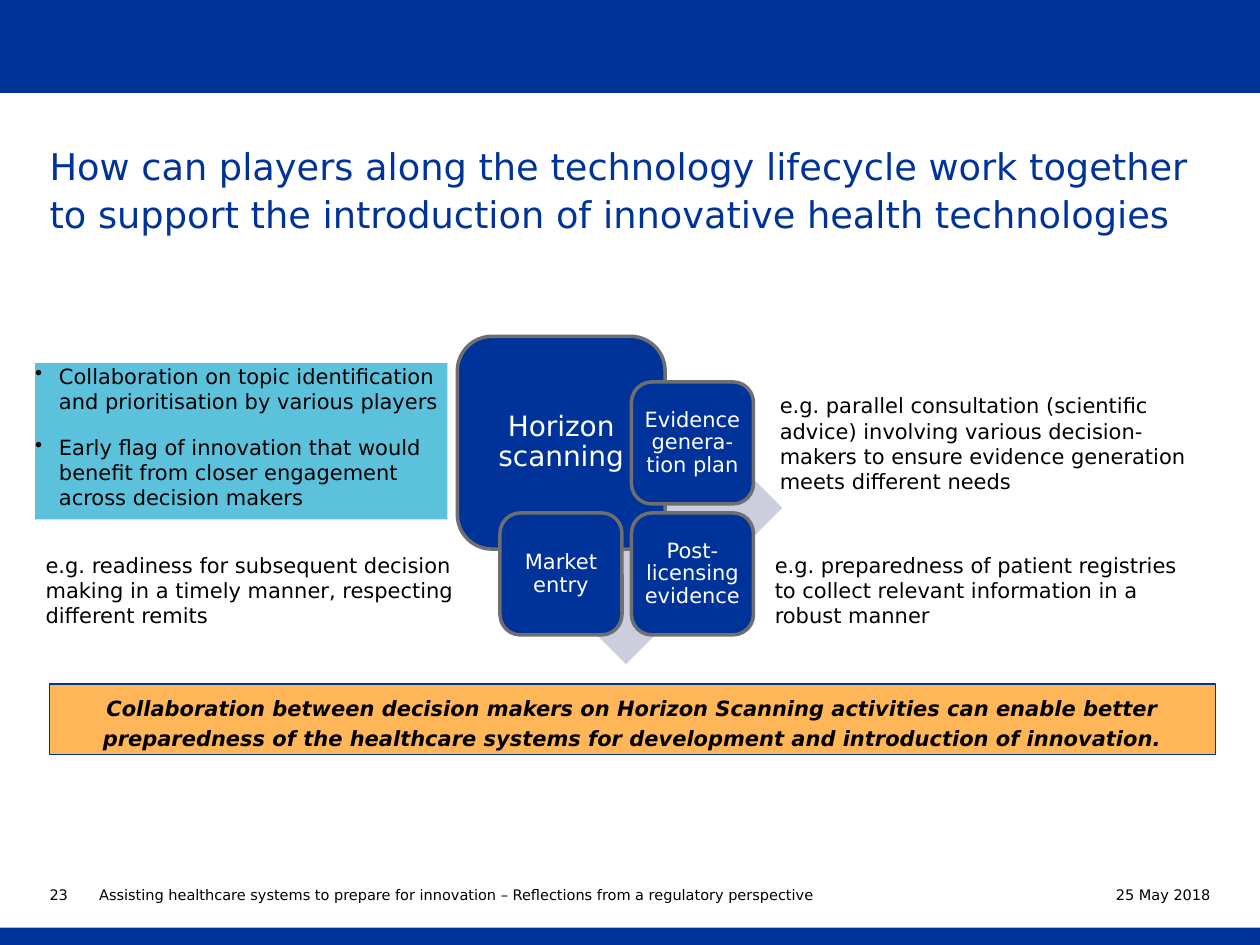
from pptx import Presentation
from pptx.dml.color import RGBColor
from pptx.enum.shapes import MSO_CONNECTOR, MSO_SHAPE
from pptx.enum.text import MSO_ANCHOR, PP_ALIGN
from pptx.oxml.ns import qn
from pptx.util import Cm, Pt
from lxml.etree import SubElement

FONT = "DejaVu Sans"
COLORS = {
    "blue": "003399",
    "white": "FFFFFF",
    "black": "000000",
    "grey": "6D6F71",
    "lavender": "CCCEDE",
    "cyan": "5CC2DC",
    "orange": "FFB659",
}

presentation = Presentation()
presentation.slide_width = Cm(25.4)
presentation.slide_height = Cm(19.05)
slide = presentation.slides.add_slide(presentation.slide_layouts[6])


def add_box(kind, box, fill=None, line=None, line_width=1):
    """Add a preset shape, or a text box when kind is None; box is in cm."""
    lengths = [Cm(value) for value in box]
    if kind is None:
        return slide.shapes.add_textbox(*lengths)
    shape = slide.shapes.add_shape(kind, *lengths)
    shape.shadow.inherit = False
    shape.fill.solid()
    shape.fill.fore_color.rgb = RGBColor.from_string(COLORS[fill])
    if line:
        shape.line.color.rgb = RGBColor.from_string(COLORS[line])
        shape.line.width = Pt(line_width)
    else:
        shape.line.fill.background()
    return shape


def set_text(shape, text, size, color="black", align=PP_ALIGN.LEFT, spacing=None,
             insets=(0, 0), anchor=MSO_ANCHOR.TOP, bullets=False):
    """Write the text of a shape; insets are (sides, top and bottom) in cm."""
    frame = shape.text_frame
    frame.text = text
    frame.word_wrap = True
    frame.vertical_anchor = anchor
    frame.margin_left = frame.margin_right = Cm(insets[0])
    frame.margin_top = frame.margin_bottom = Cm(insets[1])
    for paragraph in frame.paragraphs:
        paragraph.alignment = align
        if spacing:
            paragraph.line_spacing = spacing
        if bullets:
            paragraph.space_after = Pt(12)
            properties = paragraph._p.get_or_add_pPr()
            properties.set("marL", str(Cm(0.48)))
            properties.set("indent", str(-Cm(0.48)))
            SubElement(properties, qn("a:buChar")).set("char", "•")
        for run in paragraph.runs:
            run.font.name = FONT
            run.font.size = Pt(size)
            run.font.color.rgb = RGBColor.from_string(COLORS[color])


# Header and footer bands
add_box(MSO_SHAPE.RECTANGLE, (0, 0, 25.4, 1.88), "blue")
header_line = slide.shapes.add_connector(
    MSO_CONNECTOR.STRAIGHT, 0, Cm(1.88), Cm(25.4), Cm(1.88))
header_line.line.color.rgb = RGBColor.from_string(COLORS["white"])
header_line.line.width = Pt(0.25)
SubElement(header_line._element.spPr, qn("a:effectLst"))
add_box(MSO_SHAPE.RECTANGLE, (0, 18.7, 25.4, 0.35), "blue")

# Title
title = add_box(None, (1, 2.84, 23.4, 2.64))
set_text(title, "How can players along the technology lifecycle work together "
         "to support the introduction of innovative health technologies",
         21, "blue", spacing=Pt(27))

# Lifecycle diagram: one large stage and three small ones over a diamond
add_box(MSO_SHAPE.DIAMOND, (9.47, 7.09, 6.3, 6.3), "lavender")
left, right, upper, lower, side = 10.08, 12.73, 7.7, 10.34, 2.46
stages = [
    ("Horizon scanning", (9.22, 6.78, 4.19, 4.29), 16, 0.17),
    ("Evidence genera-tion plan", (right, upper, side, side), 12, 0.12),
    ("Market entry", (left, lower, side, side), 12, 0.12),
    ("Post-licensing evidence", (right, lower, side, side), 12, 0.12),
]
for text, box, size, inset in stages:
    stage = add_box(MSO_SHAPE.ROUNDED_RECTANGLE, box, "blue", "grey", 2)
    set_text(stage, text, size, "white", PP_ALIGN.CENTER, 0.9,
             (inset, inset), MSO_ANCHOR.MIDDLE)

# Highlighted notes on horizon scanning
highlight = add_box(MSO_SHAPE.RECTANGLE, (0.71, 7.32, 8.31, 3.15), "cyan")
set_text(highlight,
         "Collaboration on topic identification and prioritisation by various players\n"
         "Early flag of innovation that would benefit from closer engagement "
         "across decision makers", 12, bullets=True)

# Examples beside the small stages
examples = [
    ("e.g. parallel consultation (scientific advice) involving various "
     "decision-makers to ensure evidence generation meets different needs",
     (15.72, 7.92, 8.31, 2.01)),
    ("e.g. preparedness of patient registries to collect relevant information "
     "in a robust manner", (15.62, 11.13, 8.31, 1.02)),
    ("e.g. readiness for subsequent decision making in a timely manner, "
     "respecting different remits", (0.92, 11.13, 8.71, 1.04)),
]
for text, box in examples:
    set_text(add_box(None, box), text, 12)

# Conclusion banner
banner = add_box(MSO_SHAPE.RECTANGLE, (1, 13.79, 23.5, 1.42), "orange", "blue", 0.75)
set_text(banner, "Collaboration between decision makers on Horizon Scanning activities "
         "can enable better preparedness of the healthcare systems for development "
         "and introduction of innovation.",
         12, align=PP_ALIGN.CENTER, spacing=1.2, insets=(0.25, 0.13))
banner_font = banner.text_frame.paragraphs[0].runs[0].font
banner_font.bold = True
banner_font.italic = True

# Footer: page number, date and presentation title
footers = [
    ("23", 1, 0.86, PP_ALIGN.LEFT),
    ("25 May 2018", 20.4, 4, PP_ALIGN.RIGHT),
    ("Assisting healthcare systems to prepare for innovation – "
     "Reflections from a regulatory perspective", 2, 18, PP_ALIGN.LEFT),
]
for text, x, width, align in footers:
    set_text(add_box(None, (x, 17.8, width, 0.66)), text, 8.3,
             align=align, spacing=Pt(12))

presentation.save("out.pptx")
